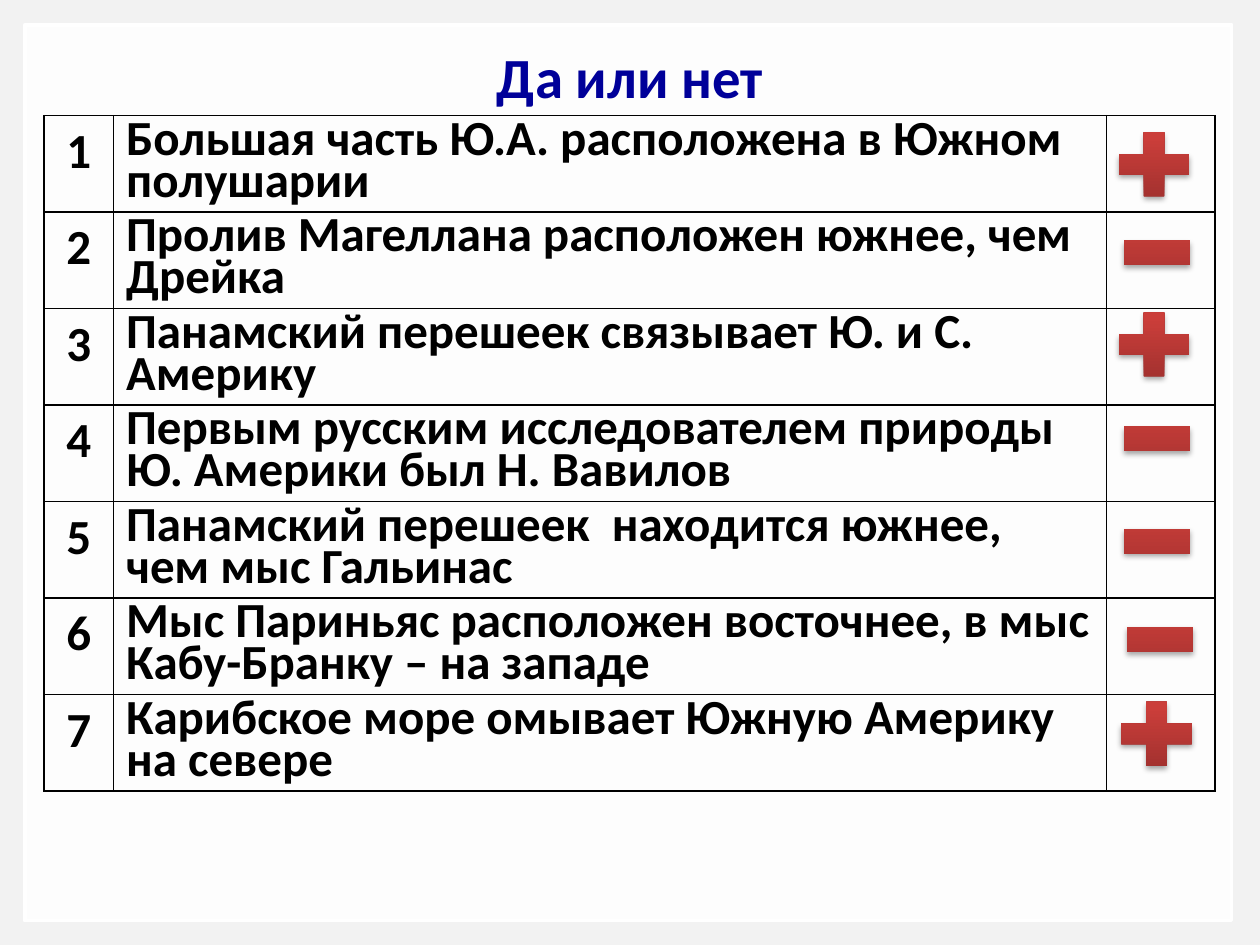
from lxml import etree
from pptx import Presentation
from pptx.dml.color import RGBColor
from pptx.enum.shapes import MSO_SHAPE
from pptx.enum.text import MSO_ANCHOR, PP_ALIGN
from pptx.oxml import parse_xml
from pptx.util import Cm, Pt

RECTANGLE, PLUS, MINUS = MSO_SHAPE.RECTANGLE, MSO_SHAPE.MATH_PLUS, MSO_SHAPE.MATH_MINUS
CENTER, LEFT, MIDDLE = PP_ALIGN.CENTER, PP_ALIGN.LEFT, MSO_ANCHOR.MIDDLE
GREY = RGBColor(0xF2, 0xF2, 0xF2)
WHITE = RGBColor(0xFF, 0xFF, 0xFF)
BLACK = RGBColor(0, 0, 0)
NAVY = RGBColor(0, 0, 0x99)
RED_STOPS = [
    (0, RGBColor(0x9C, 0x2F, 0x2D)),
    (80, RGBColor(0xCB, 0x3E, 0x3A)),
    (100, RGBColor(0xCE, 0x3B, 0x37)),
]
NAMESPACE = "http://schemas.openxmlformats.org/drawingml/2006/main"
A = "{" + NAMESPACE + "}"

TITLE_FONT = {"name": "Calibri", "size": Pt(32.4), "bold": True}
CELL_FONT = {"name": "Calibri", "size": Pt(28), "bold": True}
MARK_SIZES = {PLUS: (Cm(1.93), Cm(1.75)), MINUS: (Cm(1.8), Cm(2.06))}

# Statement, answer mark, left and top of the mark in centimetres
STATEMENTS = [
    ("Большая часть Ю.А. расположена в Южном полушарии", PLUS, 22.3, 2.44),
    ("Пролив Магеллана расположен южнее, чем Дрейка", MINUS, 22.43, 4.06),
    ("Панамский перешеек связывает Ю. и С. Америку", PLUS, 22.3, 6.07),
    ("Первым русским исследователем природы Ю. Америки был Н. Вавилов", MINUS, 22.43, 7.82),
    ("Панамский перешеек  находится южнее, чем мыс Гальинас", MINUS, 22.43, 9.88),
    ("Мыс Париньяс расположен восточнее, в мыс Кабу-Бранку – на западе", MINUS, 22.48, 11.86),
    ("Карибское море омывает Южную Америку на севере", PLUS, 22.35, 13.92),
]


def write_text(frame, text, font_format, color, align):
    para = frame.paragraphs[0]
    para.alignment = align
    span = para.add_run()
    span.text = text
    for name, value in font_format.items():
        setattr(span.font, name, value)
    span.font.color.rgb = color
    return para


deck = Presentation()
deck.slide_width, deck.slide_height = Cm(25.4), Cm(19.05)
slide = deck.slides.add_slide(deck.slide_layouts[5])
slide.background.fill.solid()
slide.background.fill.fore_color.rgb = GREY

# Title
title = slide.shapes.title
title.left, title.top, title.width, title.height = Cm(1.27), Cm(0.76), Cm(22.86), Cm(1.55)
title.text_frame.vertical_anchor = MIDDLE
write_text(title.text_frame, "Да или нет", TITLE_FONT, NAVY, CENTER)

# Translucent panel behind everything
panel = slide.shapes.add_shape(RECTANGLE, Cm(0.5), Cm(0.5), Cm(24.33), Cm(18.06))
panel.shadow.inherit = False
panel.fill.solid()
panel.fill.fore_color.rgb = WHITE
panel_color = panel.element.spPr.find(f"{A}solidFill/{A}srgbClr")
etree.SubElement(panel_color, f"{A}alpha", val="85000")
panel.line.color.rgb = WHITE
panel.line.width = Pt(2)
title.element.addprevious(panel.element)

# Table of statements
row_height = Cm(1.94)
column_widths = [Cm(1.4), Cm(20.02), Cm(2.18)]
table = slide.shapes.add_table(
    len(STATEMENTS), len(column_widths), Cm(0.89), Cm(2.33),
    sum(column_widths), row_height * len(STATEMENTS),
).table
table.first_row = table.horz_banding = False
for column, width in zip(table.columns, column_widths):
    column.width = width
for row in table.rows:
    row.height = row_height

for cell in table.iter_cells():
    cell.fill.background()
    cell_properties = cell._tc.get_or_add_tcPr()
    for index, side in enumerate(("lnL", "lnR", "lnT", "lnB")):
        border = parse_xml(
            f'<a:{side} xmlns:a="{NAMESPACE}" w="12700"><a:solidFill>'
            f'<a:srgbClr val="{BLACK}"/></a:solidFill></a:{side}>'
        )
        cell_properties.insert(index, border)

for index, (statement, mark, left, top) in enumerate(STATEMENTS):
    write_text(table.cell(index, 0).text_frame, str(index + 1), CELL_FONT, BLACK, CENTER)
    para = write_text(table.cell(index, 1).text_frame, statement, CELL_FONT, BLACK, LEFT)
    para.line_spacing = 0.7

# Answer marks
stops = "".join(
    f'<a:gs pos="{position * 1000}"><a:srgbClr val="{color}"/></a:gs>'
    for position, color in RED_STOPS
)
gradient = (
    f'<a:gradFill xmlns:a="{NAMESPACE}" rotWithShape="1"><a:gsLst>{stops}</a:gsLst>'
    '<a:lin ang="16200000" scaled="0"/></a:gradFill>'
)
shadow = (
    f'<a:outerShdw xmlns:a="{NAMESPACE}" blurRad="40000" dist="23000" dir="5400000" '
    f'rotWithShape="0"><a:srgbClr val="{BLACK}"><a:alpha val="35000"/></a:srgbClr></a:outerShdw>'
)
for statement, mark, left, top in STATEMENTS:
    sign = slide.shapes.add_shape(mark, Cm(left), Cm(top), *MARK_SIZES[mark])
    sign.line.fill.background()
    sign.shadow.inherit = False
    properties = sign.element.spPr
    properties.find(f"{A}prstGeom").addnext(parse_xml(gradient))
    properties.find(f"{A}effectLst").append(parse_xml(shadow))

deck.save("out.pptx")
